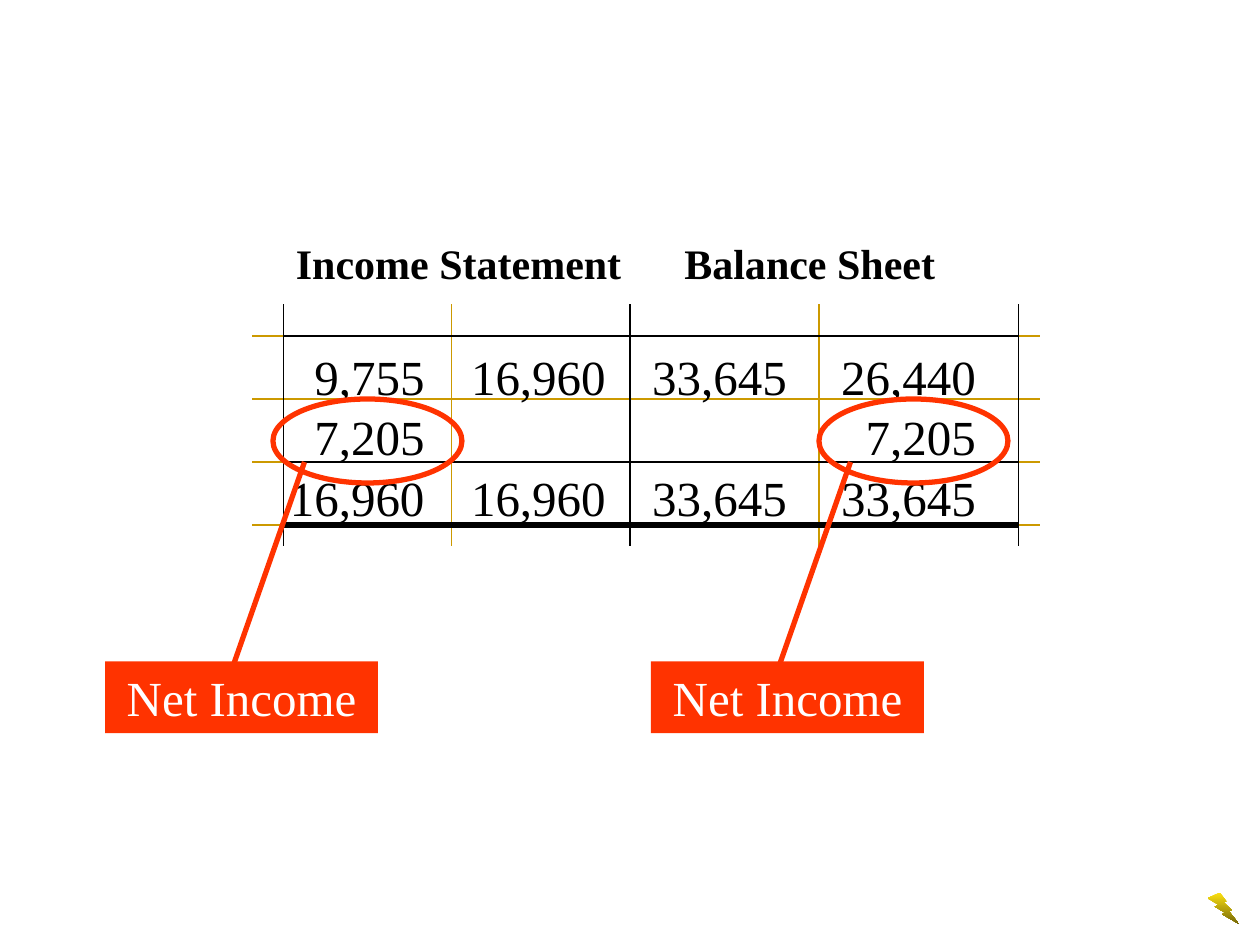
"""Build the worksheet slide that points out net income."""
import dataclasses

import lxml.etree
import pptx
import pptx.dml.color
import pptx.enum.shapes
import pptx.enum.text
import pptx.oxml.ns
import pptx.util

Pt = pptx.util.Pt
RGB = pptx.dml.color.RGBColor.from_string
qn = pptx.oxml.ns.qn
SHAPE = pptx.enum.shapes.MSO_SHAPE
ALIGN = pptx.enum.text.PP_ALIGN


@dataclasses.dataclass(frozen=True)
class Theme:
    font: str = "Times New Roman"
    ink: str = "000000"
    paper: str = "FFFFFF"
    rule: str = "CC9900"
    accent: str = "FF3300"
    bolt_top: str = "FDE111"
    bolt_bottom: str = "756808"
    heading: float = 24
    body: float = 28
    row_gap: float = 1
    thin: float = 0.75
    thick: float = 3


THEME = Theme()
LEFT, RIGHT = 162, 582
ROWS = (192, 228, 264, 300)
FIGURES = (
    ("9,755", "16,960", "33,645", "26,440"),
    ("7,205", "", "", "7,205"),
    ("16,960", "16,960", "33,645", "33,645"),
)
FIGURE_TABS = [(103.5, "r"), (207, "r"), (310.5, "r"), (418.5, "r")]


def add_line(shapes, start, end, color, width=THEME.thin):
    line = shapes.add_connector(
        pptx.enum.shapes.MSO_CONNECTOR.STRAIGHT, *map(Pt, start + end))
    line.line.color.rgb = RGB(color)
    line.line.width = Pt(width)
    lxml.etree.SubElement(line._element.spPr, qn("a:effectLst"))


def add_shape(shapes, kind, box):
    sp = shapes.add_shape(kind, *map(Pt, box))
    sp.shadow.inherit = False
    sp.line.fill.background()
    return sp


def set_tabs(p, tabs):
    tab_list = lxml.etree.SubElement(p._p.get_or_add_pPr(), qn("a:tabLst"))
    for position, align in tabs:
        lxml.etree.SubElement(tab_list, qn("a:tab"), pos=str(Pt(position)), algn=align)


def write(sp, lines, size, color, bold=False, align=ALIGN.LEFT, tabs=()):
    tf = sp.text_frame
    tf.word_wrap = True
    tf.vertical_anchor = pptx.enum.text.MSO_ANCHOR.MIDDLE
    for i, line in enumerate(lines):
        p = tf.add_paragraph() if i else tf.paragraphs[0]
        p.alignment = align
        if i:
            p.space_before = Pt(THEME.row_gap)
        if tabs:
            set_tabs(p, tabs)
        r = p.add_run()
        r.text = line
        r.font.name = THEME.font
        r.font.size = Pt(size)
        r.font.bold = bold
        r.font.color.rgb = RGB(color)


def add_text(shapes, box, lines, size, **style):
    sp = shapes.add_textbox(*map(Pt, box))
    write(sp, lines, size, THEME.ink, **style)


def add_worksheet(shapes):
    for y in ROWS:
        add_line(shapes, (144, y), (594, y), THEME.rule)
    lines = ["".join("\t" + figure for figure in row) for row in FIGURES]
    add_text(shapes, (132, 193.5, 462, 111.6), lines, THEME.body, tabs=FIGURE_TABS)
    for x, color in ((LEFT, THEME.ink), (258, THEME.rule), (468, THEME.rule),
                     (360, THEME.ink), (RIGHT, THEME.ink)):
        add_line(shapes, (x, 174), (x, 312), color)
    add_text(shapes, (LEFT, 132, 462, 36), ["Income Statement\tBalance Sheet"],
             THEME.heading, bold=True, tabs=[(222, "l")])
    for y, width in ((ROWS[0], THEME.thin), (ROWS[2], THEME.thin), (ROWS[3], THEME.thick)):
        add_line(shapes, (LEFT, y), (RIGHT, y), THEME.ink, width)


def add_callout(shapes, x):
    group = shapes.add_group_shape().shapes
    ring = add_shape(group, SHAPE.OVAL, (x + 96, 228, 108, 48))
    ring.fill.background()
    ring.line.color.rgb = RGB(THEME.accent)
    ring.line.width = Pt(THEME.thick)
    add_line(group, (x + 114, 264), (x + 72, 384), THEME.accent, THEME.thick)
    label = add_shape(group, SHAPE.RECTANGLE, (x, 378, 156, 41))
    label.fill.solid()
    label.fill.fore_color.rgb = RGB(THEME.accent)
    write(label, ["Net Income"], THEME.body, THEME.paper, align=ALIGN.CENTER)


def add_bolt(shapes):
    bolt = add_shape(shapes, SHAPE.LIGHTNING_BOLT, (690, 510, 18, 18))
    bolt.fill.gradient()
    bolt.fill.gradient_angle = 270
    colors = (THEME.bolt_top, THEME.bolt_bottom)
    for position, (stop, color) in enumerate(zip(bolt.fill.gradient_stops, colors)):
        stop.position = position
        stop.color.rgb = RGB(color)


def main():
    prs = pptx.Presentation()
    prs.slide_width, prs.slide_height = Pt(720), Pt(540)
    s = prs.slides.add_slide(prs.slide_layouts[6])
    add_worksheet(s.shapes)
    for x in (60, 372):
        add_callout(s.shapes, x)
    add_bolt(s.shapes)
    prs.save("out.pptx")


if __name__ == "__main__":
    main()
